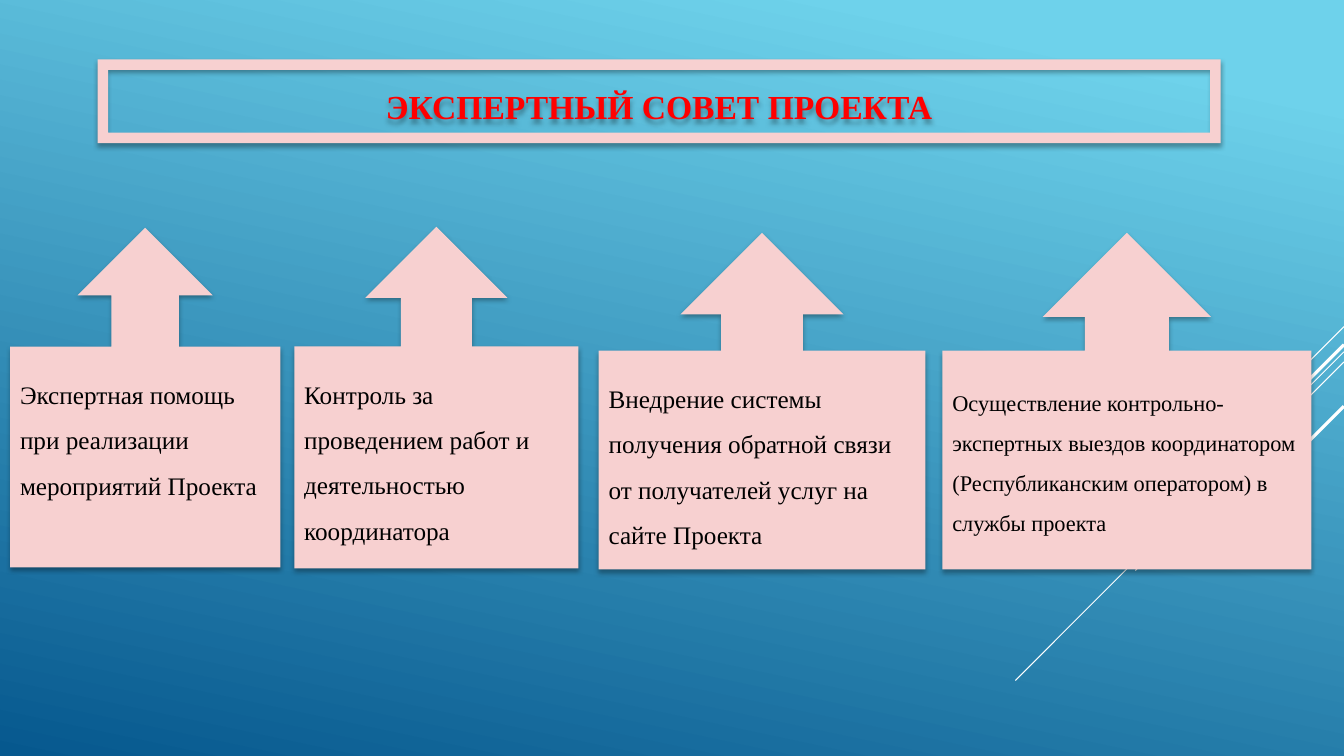
"""Build the slide on the project's expert council."""
from dataclasses import dataclass

from lxml.etree import SubElement
from pptx import Presentation
from pptx.dml.color import RGBColor
from pptx.enum.shapes import MSO_CONNECTOR, MSO_SHAPE
from pptx.enum.text import MSO_ANCHOR, PP_ALIGN
from pptx.oxml.ns import qn
from pptx.util import Pt

WIDE, HIGH = 960, 540
TITLE = "ЭКСПЕРТНЫЙ СОВЕТ ПРОЕКТА"
FRAME = (69.8, 42.5, 802, 59.8)
HEAD = (69.8, 46, 802, 59.8)
TASKS = [
    ("Экспертная помощь при реализации мероприятий Проекта",
     (7.2, 162.7, 193, 242.6), 18, 12.5),
    ("Контроль за проведением работ и деятельностью координатора",
     (210.2, 162, 203, 244), 18, 12.5),
    ("Внедрение системы получения обратной связи от получателей услуг "
     "на сайте Проекта", (427.7, 166.3, 233.3, 240.5), 18, 12.5),
    ("Осуществление контрольно-экспертных выездов координатором "
     "(Республиканским оператором) в службы проекта",
     (673.2, 166.3, 263.5, 240.5), 16, 17.5),
]
RAYS = [(233.3, 72, 0.75), (251.3, 234.7, 0.75), (258.5, 149, 0.75),
        (246.2, 137.5, 2.25), (290.2, 100, 2.25)]


@dataclass(frozen=True)
class Theme:
    """Hold the colours and type of the slide."""
    light: str = "6ED2EB"
    deep: str = "06588E"
    pink: str = "F7D0D0"
    red: str = "FF0000"
    ink: str = "000000"
    ray: str = "FFFFFF"
    font: str = "Times New Roman"
    head: int = 24
    lead: float = 1.8


LOOK = Theme()


def tint(code):
    """Turn a hex code into a colour."""
    return RGBColor.from_string(code)


def shade(props):
    """Give a shape a soft shadow straight below it."""
    glow = SubElement(SubElement(props, qn("a:effectLst")), qn("a:outerShdw"),
                      blurRad=str(Pt(3.5)), dist=str(Pt(2.2)),
                      dir="5400000", algn="ctr", rotWithShape="0")
    ink = SubElement(glow, qn("a:srgbClr"), val=LOOK.ink)
    SubElement(ink, qn("a:alpha"), val="32000")


def write(shape, text, size, code, align, bold=False):
    """Set one paragraph of text in a shape."""
    para = shape.text_frame.paragraphs[0]
    para.alignment = align
    para.line_spacing = Pt(size * LOOK.lead)
    run = para.add_run()
    run.text = text
    font = run.font
    font.name, font.size, font.bold = LOOK.font, Pt(size), bold
    font.color.rgb = tint(code)


def block(slide, kind, area):
    """Add a pink shape with a shadow."""
    shape = slide.shapes.add_shape(kind, *map(Pt, area))
    shape.fill.solid()
    shape.fill.fore_color.rgb = tint(LOOK.pink)
    shape.line.fill.background()
    shade(shape._element.spPr)
    return shape


def paint(slide):
    """Draw the gradient and the slanted rays."""
    fill = slide.background.fill
    fill.gradient()
    fill.gradient_angle = 258
    stops = zip(fill.gradient_stops, (LOOK.light, LOOK.deep), (0.1, 1))
    for stop, code, place in stops:
        stop.color.rgb = tint(code)
        stop.position = place
    for top, span, width in RAYS:
        ends = (WIDE, top, WIDE - span, top + span)
        ray = slide.shapes.add_connector(MSO_CONNECTOR.STRAIGHT, *map(Pt, ends))
        ray.line.color.rgb = tint(LOOK.ray)
        ray.line.width = Pt(width)
        SubElement(ray._element.spPr, qn("a:effectLst"))


def title(slide):
    """Place the heading in its frame."""
    block(slide, MSO_SHAPE.FRAME, FRAME)
    head = slide.shapes.title
    head.left, head.top, head.width, head.height = map(Pt, HEAD)
    head.text_frame.vertical_anchor = MSO_ANCHOR.MIDDLE
    write(head, TITLE, LOOK.head, LOOK.red, PP_ALIGN.CENTER, True)
    head.text_frame.paragraphs[0].line_spacing = 1
    head.fill.background()
    shade(head._element.spPr)


def main():
    """Build and save the deck."""
    deck = Presentation()
    deck.slide_width, deck.slide_height = Pt(WIDE), Pt(HIGH)
    slide = deck.slides.add_slide(deck.slide_layouts[5])
    paint(slide)
    title(slide)
    for text, area, size, inset in TASKS:
        task = block(slide, MSO_SHAPE.UP_ARROW_CALLOUT, area)
        task.text_frame.word_wrap = True
        task.text_frame.vertical_anchor = MSO_ANCHOR.TOP
        task.text_frame.margin_top = Pt(inset)
        write(task, text, size, LOOK.ink, PP_ALIGN.LEFT)
    deck.save("out.pptx")


if __name__ == "__main__":
    main()
